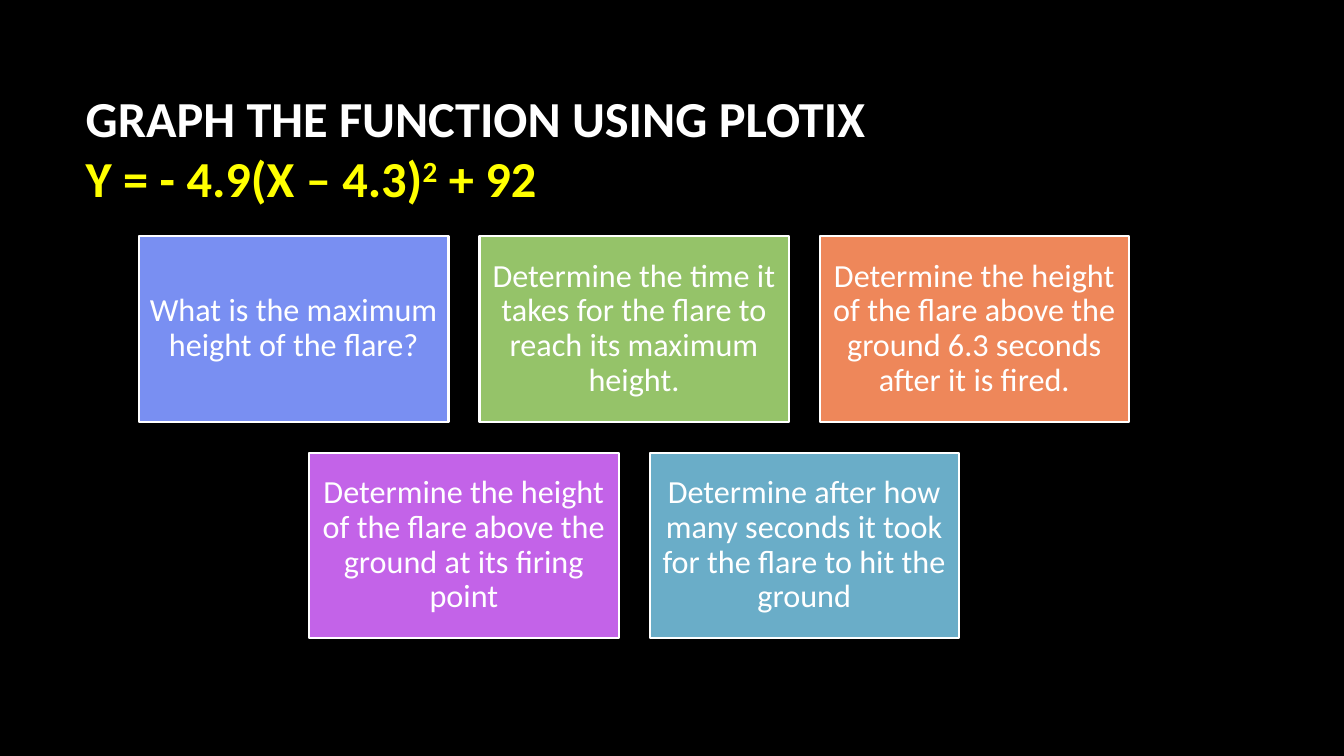
import copy
import pptx
import pptx.dml.color
import pptx.enum.shapes
import pptx.enum.text
import pptx.util

Pt = pptx.util.Pt
RGB = pptx.dml.color.RGBColor.from_string
ALIGN = pptx.enum.text.PP_ALIGN

HUES = {
    "black": "000000",
    "white": "FFFFFF",
    "yellow": "FFFF00",
    "blue": "798FF2",
    "green": "95C369",
    "orange": "EE875A",
    "purple": "C363E8",
    "teal": "6AADC8",
}

ROWS = [
    [
        ("What is the maximum height of the flare?", "blue"),
        ("Determine the time it takes for the flare to reach its maximum height.", "green"),
        ("Determine the height of the flare above the ground 6.3 seconds after it is fired.", "orange"),
    ],
    [
        ("Determine the height of the flare above the ground at its firing point", "purple"),
        ("Determine after how many seconds it took for the flare to hit the ground", "teal"),
    ],
]

WIDE, HIGH, GAP = 221, 132.6, 22.1
MIDDLE, TOP = 453, 168.6


def write(para, text, size=23, hue="white", bold=False, base=0):
    run = para.add_run()
    run.text = text
    run.font.name = "Calibri"
    run.font.size = Pt(size)
    run.font.bold = bold
    run.font.color.rgb = RGB(HUES[hue])
    if base:
        run.font._element.set("baseline", str(base * 1000))
    return run


def frame(shape, align, inset):
    body = shape.text_frame
    body.word_wrap = True
    body.auto_size = pptx.enum.text.MSO_AUTO_SIZE.NONE
    body.vertical_anchor = pptx.enum.text.MSO_ANCHOR.MIDDLE
    body.margin_left = body.margin_right = Pt(inset)
    body.margin_top = body.margin_bottom = Pt(inset)
    para = body.paragraphs[0]
    para.alignment = align
    return para


def head(slide):
    title = slide.shapes.title
    title.left, title.top = Pt(54), Pt(48.2)
    title.width, title.height = Pt(798), Pt(114.5)
    para = frame(title, ALIGN.LEFT, 7.2)
    lead = write(para, "GRAPH THE FUNCTION USING PLOTIX", size=36, bold=True)
    para._p.add_br().append(copy.deepcopy(lead.font._element))
    for text, base in [("Y = - 4.9(X – 4.3)", 0), ("2", 30), (" + 92", 0)]:
        write(para, text, size=36, hue="yellow", bold=True, base=base)


def card(slide, left, top, text, hue):
    box = slide.shapes.add_shape(
        pptx.enum.shapes.MSO_SHAPE.RECTANGLE, Pt(left), Pt(top), Pt(WIDE), Pt(HIGH))
    box.shadow.inherit = False
    box.fill.solid()
    box.fill.fore_color.rgb = RGB(HUES[hue])
    box.line.color.rgb = RGB(HUES["white"])
    box.line.width = Pt(1.5)
    para = frame(box, ALIGN.CENTER, 7)
    para.line_spacing = 0.9
    write(para, text)


def main():
    deck = pptx.Presentation()
    deck.slide_width, deck.slide_height = Pt(960), Pt(540)
    slide = deck.slides.add_slide(deck.slide_layouts[5])
    slide.background.fill.solid()
    slide.background.fill.fore_color.rgb = RGB(HUES["black"])
    head(slide)
    for row, cards in enumerate(ROWS):
        count = len(cards)
        start = MIDDLE - (count * WIDE + (count - 1) * GAP) / 2
        for col, (text, hue) in enumerate(cards):
            card(slide, start + col * (WIDE + GAP), TOP + row * (HIGH + GAP), text, hue)
    deck.save("out.pptx")


if __name__ == "__main__":
    main()
